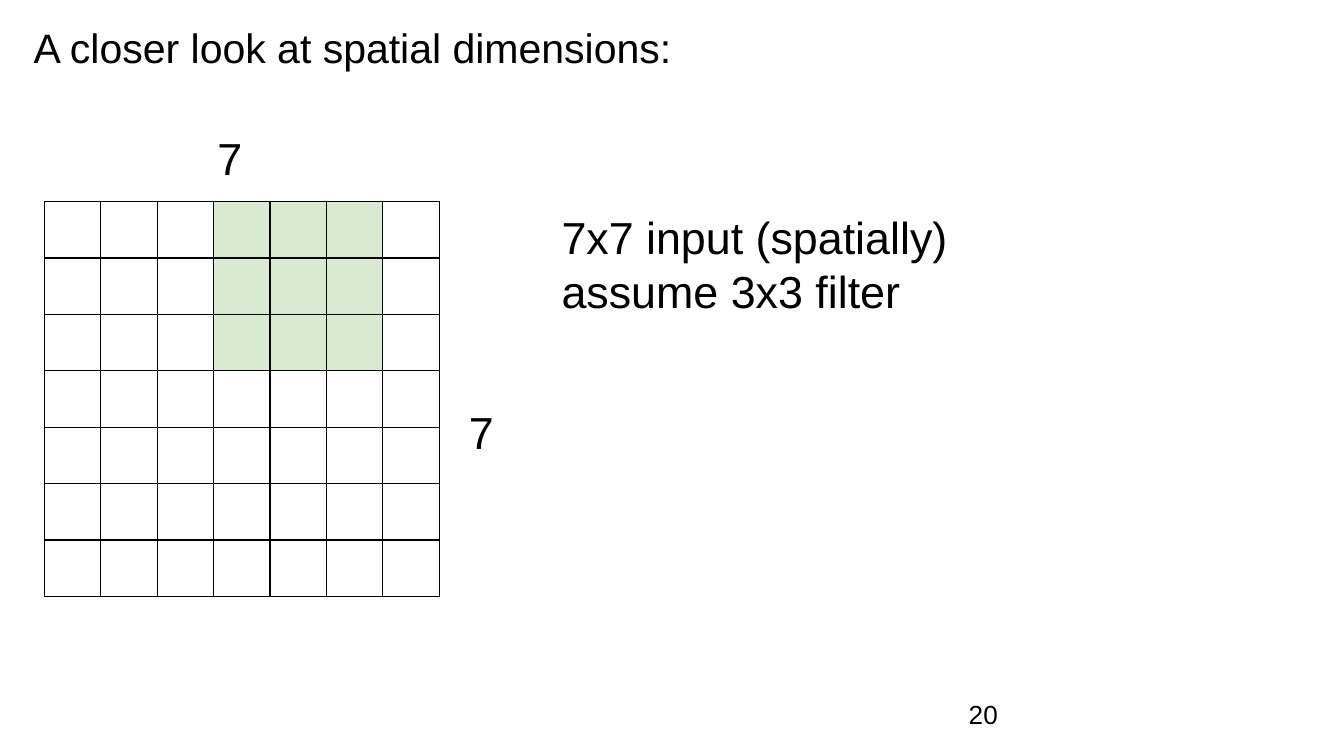
from dataclasses import dataclass
from lxml.etree import SubElement
from pptx import Presentation
from pptx.dml.color import RGBColor
from pptx.enum.text import MSO_ANCHOR, MSO_AUTO_SIZE, PP_ALIGN
from pptx.oxml.ns import qn
from pptx.util import Inches, Pt


@dataclass(frozen=True)
class Theme:
    font: str = "Arial"
    ink: str = "000000"
    paper: str = "FFFFFF"
    mark: str = "D9EAD3"
    head: float = 22
    body: float = 24
    foot: float = 14
    rule: float = 0.75
    pad: float = 0.1


@dataclass(frozen=True)
class Label:
    text: str
    left: float
    top: float
    width: float
    height: float
    size: float
    anchor: MSO_ANCHOR = MSO_ANCHOR.TOP


THEME = Theme()
WIDTH = 10
HEIGHT = WIDTH * 9 / 16
COUNT, CELL = 7, 0.42
LEFT, TOP = 0.33, 1.5
FILTER_ROWS, FILTER_COLS = range(0, 3), range(3, 6)

TITLE = Label("A closer look at spatial dimensions:", 0.15, 0.07, 9.16, 0.66, THEME.head)
LABELS = [
    Label("20", 7.11, 5.1, 0.6, 0.43, THEME.foot, MSO_ANCHOR.MIDDLE),
    Label("7x7 input (spatially)\nassume 3x3 filter", 4.08, 1.46, 5.6, 2.01, THEME.body),
    Label("7", 1.52, 0.87, 0.6, 0.5, THEME.body),
    Label("7", 3.39, 2.91, 0.64, 0.31, THEME.body),
]


def write(shape, label: Label) -> None:
    """Place a text shape and give it the label's words and format."""
    shape.left, shape.top = Inches(label.left), Inches(label.top)
    shape.width, shape.height = Inches(label.width), Inches(label.height)
    frame = shape.text_frame
    frame.text = label.text
    frame.word_wrap = True
    frame.auto_size = MSO_AUTO_SIZE.NONE
    frame.vertical_anchor = label.anchor
    frame.margin_left = frame.margin_right = Inches(THEME.pad)
    frame.margin_top = frame.margin_bottom = Inches(THEME.pad)
    for para in frame.paragraphs:
        para.alignment = PP_ALIGN.LEFT
        para.line_spacing = 1.0
        para.space_before = Pt(0)
        for run in para.runs:
            run.font.name = THEME.font
            run.font.size = Pt(label.size)
            run.font.color.rgb = RGBColor.from_string(THEME.ink)


def edge(cell) -> None:
    """Rule all four sides of a cell; borders must come before its fill."""
    props = cell._tc.get_or_add_tcPr()
    for side in ("lnL", "lnR", "lnT", "lnB"):
        line = SubElement(props, qn(f"a:{side}"), w=str(Pt(THEME.rule)))
        fill = SubElement(line, qn("a:solidFill"))
        SubElement(fill, qn("a:srgbClr"), val=THEME.ink)


def draw_grid(slide) -> None:
    side = Inches(CELL * COUNT)
    table = slide.shapes.add_table(
        COUNT, COUNT, Inches(LEFT), Inches(TOP), side, side).table
    table.first_row = table.horz_banding = False
    for row in range(COUNT):
        for col in range(COUNT):
            cell = table.cell(row, col)
            cell.margin_top = cell.margin_bottom = 0
            edge(cell)
            inside = row in FILTER_ROWS and col in FILTER_COLS
            cell.fill.solid()
            cell.fill.fore_color.rgb = RGBColor.from_string(
                THEME.mark if inside else THEME.paper)


def main() -> None:
    deck = Presentation()
    deck.slide_width, deck.slide_height = Inches(WIDTH), Inches(HEIGHT)
    slide = deck.slides.add_slide(deck.slide_layouts[5])
    write(slide.shapes.title, TITLE)
    for label in LABELS:
        write(slide.shapes.add_textbox(0, 0, 0, 0), label)
    draw_grid(slide)
    deck.save("out.pptx")


if __name__ == "__main__":
    main()
